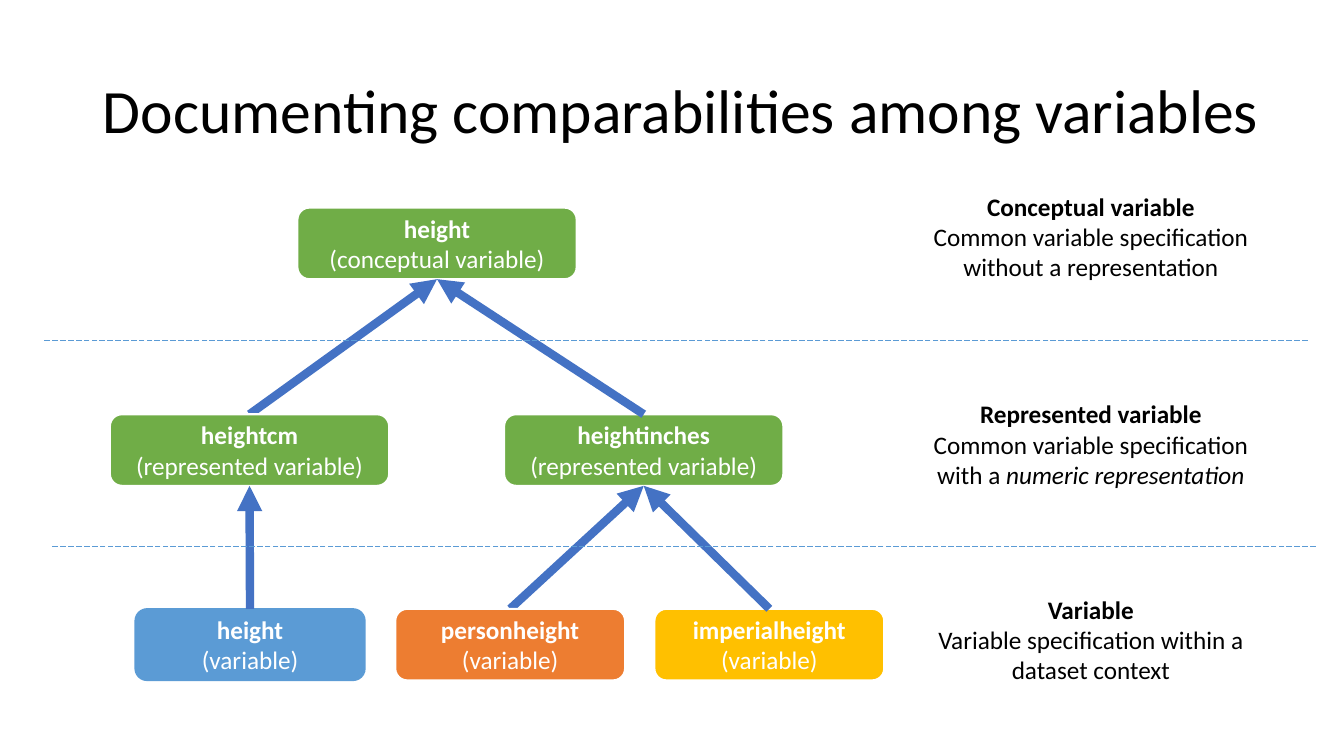
from pptx import Presentation
from pptx.dml.color import RGBColor
from pptx.enum.dml import MSO_LINE_DASH_STYLE as DASH
from pptx.enum.shapes import MSO_CONNECTOR as CONNECTOR, MSO_SHAPE as SHAPE
from pptx.enum.text import MSO_ANCHOR as ANCHOR, PP_ALIGN as ALIGN
from pptx.oxml.ns import qn
from pptx.util import Inches, Pt
from lxml.etree import SubElement

BLACK = RGBColor(0x00, 0x00, 0x00)
WHITE = RGBColor(0xFF, 0xFF, 0xFF)
GREEN = RGBColor(0x70, 0xAD, 0x47)
GOLD = RGBColor(0xFF, 0xC0, 0x00)
ORANGE = RGBColor(0xED, 0x7D, 0x31)
SKY = RGBColor(0x5B, 0x9B, 0xD5)
BLUE = RGBColor(0x44, 0x72, 0xC4)

FONT = "Calibri"
TOP_SITE, BOTTOM_SITE = 0, 2
BOX_HEIGHT = 0.71
WIDE, NARROW = 2.77, 2.28
CONCEPT_TOP, REPRESENTED_TOP, VARIABLE_TOP = 2.06, 4.11, 6.04


def add_run(paragraph, text, color, size=18, bold=False, italic=False):
    run = paragraph.add_run()
    run.text = text
    font = run.font
    font.name, font.size = FONT, Pt(size)
    font.bold, font.italic = bold, italic
    font.color.rgb = color


def set_frame(frame):
    frame.word_wrap = True
    frame.vertical_anchor = ANCHOR.MIDDLE
    return frame.paragraphs[0]


def add_textbox(slide, left, top, width, height):
    box = slide.shapes.add_textbox(*map(Inches, (left, top, width, height)))
    return box.text_frame


def add_title(slide, text):
    paragraph = set_frame(add_textbox(slide, 0.92, 0.4, 11.85, 1.45))
    paragraph.line_spacing = 0.9
    add_run(paragraph, text, BLACK, size=44)


def add_variable(slide, left, top, width, name, level, fill,
                 outline=WHITE, outline_width=1.5):
    box = slide.shapes.add_shape(
        SHAPE.ROUNDED_RECTANGLE,
        *map(Inches, (left, top, width, BOX_HEIGHT)))
    box.shadow.inherit = False
    box.fill.solid()
    box.fill.fore_color.rgb = fill
    box.line.color.rgb = outline
    box.line.width = Pt(outline_width)
    paragraph = set_frame(box.text_frame)
    paragraph.alignment = ALIGN.CENTER
    add_run(paragraph, name, WHITE, bold=True)
    paragraph.add_line_break()
    add_run(paragraph, f"({level})", WHITE)
    return box


def add_line(slide, start, end, color, width):
    line = slide.shapes.add_connector(
        CONNECTOR.STRAIGHT, *map(Inches, (*start, *end)))
    line.line.color.rgb = color
    line.line.width = Pt(width)
    SubElement(line.element.spPr, qn("a:effectLst"))
    return line


def add_arrow(slide, child, parent, behind_child=False):
    arrow = add_line(slide, (0, 0), (1, 1), BLUE, 6)
    arrow.begin_connect(child, TOP_SITE)
    arrow.end_connect(parent, BOTTOM_SITE)
    SubElement(arrow.line._get_or_add_ln(), qn("a:tailEnd"), type="triangle")
    if behind_child:
        child.element.addprevious(arrow.element)


def add_divider(slide, left, y):
    divider = add_line(slide, (left + 12.54, y), (left, y), SKY, 0.5)
    divider.line.dash_style = DASH.LONG_DASH


def add_explanation(slide, top, term, description, emphasis=""):
    frame = add_textbox(slide, 9.09, top, 3.46, 1.21)
    heading = set_frame(frame)
    body = frame.add_paragraph()
    heading.alignment = body.alignment = ALIGN.CENTER
    add_run(heading, term, BLACK, bold=True)
    add_run(body, description, BLACK)
    if emphasis:
        add_run(body, emphasis, BLACK, italic=True)


def main():
    deck = Presentation()
    deck.slide_width, deck.slide_height = Inches(13.33), Inches(7.5)
    slide = deck.slides.add_slide(deck.slide_layouts[6])

    add_title(slide, "Documenting comparabilities among variables")

    concept = add_variable(slide, 2.95, CONCEPT_TOP, WIDE,
                           "height", "conceptual variable", GREEN)
    height_cm, height_inches = [
        add_variable(slide, left, REPRESENTED_TOP, WIDE,
                     name, "represented variable", GREEN)
        for left, name in ((1.09, "heightcm"), (5, "heightinches"))]
    height = add_variable(slide, 1.34, VARIABLE_TOP, NARROW,
                          "height", "variable", SKY, SKY, 1)
    person, imperial = [
        add_variable(slide, left, VARIABLE_TOP, NARROW, name, "variable", fill)
        for left, name, fill in ((3.92, "personheight", ORANGE),
                                 (6.49, "imperialheight", GOLD))]

    add_arrow(slide, height_cm, concept, behind_child=True)
    add_arrow(slide, height_inches, concept)
    add_arrow(slide, height, height_cm)
    add_arrow(slide, person, height_inches, behind_child=True)
    add_arrow(slide, imperial, height_inches)

    add_divider(slide, 0.43, 3.38)
    add_divider(slide, 0.51, 5.42)

    add_explanation(slide, 1.74, "Conceptual variable",
                    "Common variable specification without a representation")
    add_explanation(slide, 3.8, "Represented variable",
                    "Common variable specification with a ",
                    "numeric representation")
    add_explanation(slide, 5.74, "Variable",
                    "Variable specification within a dataset context")

    deck.save("out.pptx")


if __name__ == "__main__":
    main()
